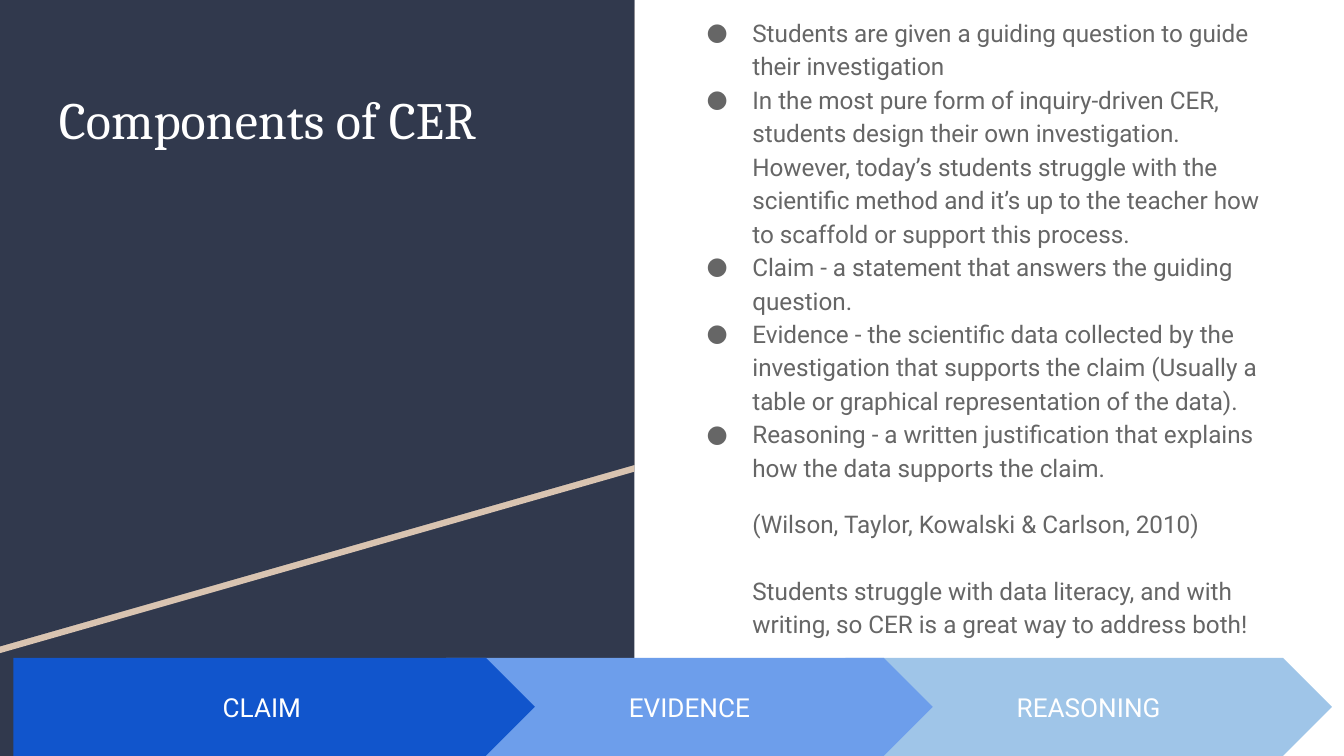
from dataclasses import dataclass

from lxml.etree import SubElement
from pptx import Presentation
from pptx.dml.color import RGBColor as RGB
from pptx.enum.shapes import MSO_SHAPE as SHAPE
from pptx.enum.text import MSO_ANCHOR as ANCHOR, PP_ALIGN as ALIGN
from pptx.oxml.ns import qn
from pptx.util import Inches, Pt


@dataclass(frozen=True)
class Theme:
    navy: str = "31394D"
    sand: str = "D9C4B1"
    white: str = "FFFFFF"
    grey: str = "666666"
    claim: str = "1155CC"
    evidence: str = "6D9EEB"
    reasoning: str = "9FC5E8"
    title_font: str = "Cambria"
    body_font: str = "Roboto"
    title_size: int = 28
    body_size: int = 13
    step_size: int = 14


class SlideBuilder:
    def __init__(self, slide, theme):
        self.s = slide
        self.theme = theme

    def paint(self, sp, color):
        sp.shadow.inherit = False
        sp.fill.solid()
        sp.fill.fore_color.rgb = RGB.from_string(color)
        sp.line.fill.background()

    def frame(self, sp, anchor=ANCHOR.TOP):
        tf = sp.text_frame
        tf.word_wrap = True
        tf.vertical_anchor = anchor
        tf.margin_left = tf.margin_right = Inches(0.1)
        tf.margin_top = tf.margin_bottom = Inches(0.1)
        return tf

    def run(self, p, text, font, size, color):
        r = p.add_run()
        r.text = text
        r.font.name = font
        r.font.size = Pt(size)
        r.font.color.rgb = RGB.from_string(color)

    def shape(self, kind, box, color):
        sp = self.s.shapes.add_shape(kind, *map(Inches, box))
        self.paint(sp, color)
        return sp

    def polygon(self, points, color):
        start, *rest = [(Inches(x), Inches(y)) for x, y in points]
        builder = self.s.shapes.build_freeform(*start)
        builder.add_line_segments(rest, close=True)
        self.paint(builder.convert_to_shape(), color)

    def title(self, text, box):
        t = self.theme
        tf = self.frame(self.s.shapes.add_textbox(*map(Inches, box)))
        self.run(tf.paragraphs[0], text, t.title_font, t.title_size, t.white)

    def bullet(self, p):
        t = self.theme
        pPr = p._p.get_or_add_pPr()
        pPr.set("indent", str(Inches(-0.34)))
        color = SubElement(pPr, qn("a:buClr"))
        SubElement(color, qn("a:srgbClr"), val=t.grey)
        SubElement(pPr, qn("a:buFont"), typeface=t.body_font)
        SubElement(pPr, qn("a:buChar"), char="●")

    def body(self, bullets, notes, box):
        t = self.theme
        tf = self.frame(self.s.shapes.add_textbox(*map(Inches, box)))
        items = [(text, 0, True) for text in bullets]
        items += [(text, gap, False) for text, gap in notes]
        for i, (text, gap, bulleted) in enumerate(items):
            p = tf.add_paragraph() if i else tf.paragraphs[0]
            p.line_spacing = 1.15
            p.space_before = Pt(gap)
            p._p.get_or_add_pPr().set("marL", str(Inches(0.5)))
            if bulleted:
                self.bullet(p)
            self.run(p, text, t.body_font, t.body_size, t.grey)

    def step(self, kind, text, box, color):
        t = self.theme
        sp = self.shape(kind, box, color)
        sp.adjustments[0] = 0.5
        p = self.frame(sp, ANCHOR.MIDDLE).paragraphs[0]
        p.alignment = ALIGN.CENTER
        self.run(p, text, t.body_font, t.step_size, t.white)


BULLETS = [
    "Students are given a guiding question to guide their investigation",
    "In the most pure form of inquiry-driven CER, students design their own "
    "investigation. However, today’s students struggle with the scientific "
    "method and it’s up to the teacher how to scaffold or support this process.",
    "Claim - a statement that answers the guiding question.",
    "Evidence - the scientific data collected by the investigation that supports "
    "the claim (Usually a table or graphical representation of the data).",
    "Reasoning - a written justification that explains how the data supports "
    "the claim.",
]
NOTES = [
    ("(Wilson, Taylor, Kowalski & Carlson, 2010)", 12),
    ("Students struggle with data literacy, and with writing, so CER is a great "
     "way to address both!", 18),
]


def main():
    prs = Presentation()
    prs.slide_width = Inches(10)
    prs.slide_height = prs.slide_width * 9 // 16
    slide_h = prs.slide_height.inches
    theme = Theme()
    b = SlideBuilder(prs.slides.add_slide(prs.slide_layouts[6]), theme)

    panel_w = 4.72
    b.shape(SHAPE.RECTANGLE, (0, 0, panel_w, slide_h), theme.navy)
    for top, color in ((0.05, theme.sand), (0, theme.navy)):
        b.polygon([(0, top), (panel_w, top),
                   (panel_w, top + 3.46), (0, top + 4.81)], color)

    b.title("Components of CER", (0.34, 0.55, 4.05, 2.74))
    b.body(BULLETS, NOTES, (5, 0, 4.56, 4.89))

    step_h = 0.73
    steps = [
        (SHAPE.CHEVRON, "REASONING", 6.29, 3.62, theme.reasoning),
        (SHAPE.CHEVRON, "EVIDENCE", 3.32, 3.62, theme.evidence),
        (SHAPE.PENTAGON, "CLAIM", 0.1, 3.88, theme.claim),
    ]
    for kind, text, left, width, color in steps:
        b.step(kind, text, (left, slide_h - step_h, width, step_h), color)

    prs.save("out.pptx")


if __name__ == "__main__":
    main()
